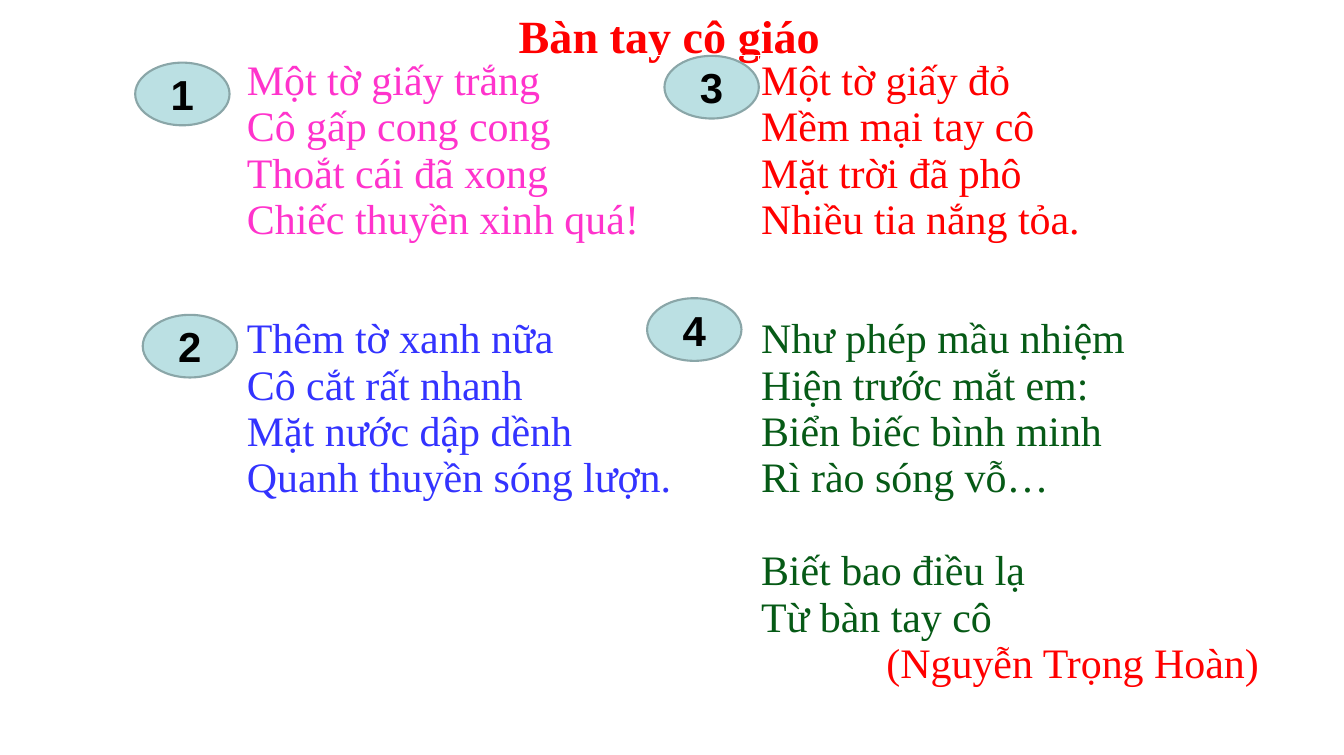
from dataclasses import dataclass

import pptx
import pptx.dml.color
import pptx.enum.shapes
import pptx.enum.text
import pptx.util

Inches = pptx.util.Inches
Pt = pptx.util.Pt
Align = pptx.enum.text.PP_ALIGN
Anchor = pptx.enum.text.MSO_ANCHOR


@dataclass(frozen=True)
class Theme:
    verse_font: str = "Times New Roman"
    number_font: str = "Arial"
    title_size: int = 44
    verse_size: int = 40
    red: str = "FF0000"
    pink: str = "FF33CC"
    blue: str = "3333FF"
    green: str = "065A16"
    black: str = "000000"
    badge_fill: str = "BBE0E3"
    badge_line: str = "8AA6A8"


THEME = Theme()
SLIDE_WIDTH, SLIDE_HEIGHT = 17.8, 10
POEM_LEFT, POEM_TOP = 3.23, 0.73
COLUMNS = (6.81, 7.02)
ROWS = (3.42, 5.41)
BADGE_WIDTH, BADGE_HEIGHT = 1.25, 0.83
CELL_INSET = 0.04
AUTHOR_INDENT = 1.66

# Number, row, column, colour, badge offset from the cell corner, verse groups
STANZAS = [
    (1, 0, 0, THEME.pink, (-1.44, 0.1),
     [["Một tờ giấy trắng", "Cô gấp cong cong",
       "Thoắt cái đã xong", "Chiếc thuyền xinh quá!"]]),
    (2, 1, 0, THEME.blue, (-1.34, 0.02),
     [["Thêm tờ xanh nữa", "Cô cắt rất nhanh",
       "Mặt nước dập dềnh", "Quanh thuyền sóng lượn."]]),
    (3, 0, 1, THEME.red, (-1.24, 0.01),
     [["Một tờ giấy đỏ", "Mềm mại tay cô",
       "Mặt trời đã phô", "Nhiều tia nắng tỏa."]]),
    (4, 1, 1, THEME.green, (-1.47, -0.2),
     [["Như phép mầu nhiệm", "Hiện trước mắt em:",
       "Biển biếc bình minh", "Rì rào sóng vỗ…"],
      ["Biết bao điều lạ", "Từ bàn tay cô"]]),
]
AUTHOR = "(Nguyễn Trọng Hoàn)"


def rgb(colour):
    return pptx.dml.color.RGBColor.from_string(colour)


def apply_format(target, values):
    for name, value in values.items():
        setattr(target, name, value)


def write_line(paragraph, text, font, size, colour, bold=False):
    line = paragraph.add_run()
    line.text = text
    apply_format(line.font, {"name": font, "size": Pt(size), "bold": bold})
    line.font.color.rgb = rgb(colour)


def add_title(slide, text):
    title = slide.shapes.title
    apply_format(title, {"left": Inches(6.77), "top": 0,
                         "width": Inches(5.32), "height": Inches(0.84)})
    apply_format(title.text_frame, {
        "word_wrap": True, "auto_size": pptx.enum.text.MSO_AUTO_SIZE.NONE,
        "vertical_anchor": Anchor.TOP, "margin_top": Inches(0.1),
        "margin_bottom": 0})
    heading = title.text_frame.paragraphs[0]
    heading.alignment = Align.LEFT
    write_line(heading, text, THEME.verse_font, THEME.title_size,
               THEME.red, bold=True)


def add_poem_table(slide):
    poem = slide.shapes.add_table(
        len(ROWS), len(COLUMNS), Inches(POEM_LEFT), Inches(POEM_TOP),
        Inches(sum(COLUMNS)), Inches(sum(ROWS))).table
    apply_format(poem, {"first_row": False, "horz_banding": False})
    for column, width in zip(poem.columns, COLUMNS):
        column.width = Inches(width)
    for row, height in zip(poem.rows, ROWS):
        row.height = Inches(height)
    for cell in poem.iter_cells():
        cell.fill.background()
        apply_format(cell, {f"margin_{side}": Inches(CELL_INSET)
                            for side in ("left", "top", "right", "bottom")})
    return poem


def write_stanza(cell, groups, colour):
    """Write one verse per paragraph, with a line of space between groups."""
    frame = cell.text_frame
    for group_index, verses in enumerate(groups):
        for verse_index, verse in enumerate(verses):
            first = group_index == verse_index == 0
            paragraph = frame.paragraphs[0] if first else frame.add_paragraph()
            if group_index and verse_index == 0:
                paragraph.space_before = Pt(THEME.verse_size * 1.11)
            write_line(paragraph, verse, THEME.verse_font,
                       THEME.verse_size, colour)


def write_author(cell):
    credit = cell.text_frame.add_paragraph()
    credit._p.get_or_add_pPr().set("marL", str(Inches(AUTHOR_INDENT)))
    write_line(credit, AUTHOR, THEME.verse_font, THEME.verse_size, THEME.red)


def add_badge(slide, number, row, column, offset):
    left = POEM_LEFT + sum(COLUMNS[:column]) + offset[0]
    top = POEM_TOP + sum(ROWS[:row]) + offset[1]
    badge = slide.shapes.add_shape(
        pptx.enum.shapes.MSO_SHAPE.OVAL, Inches(left), Inches(top),
        Inches(BADGE_WIDTH), Inches(BADGE_HEIGHT))
    badge.shadow.inherit = False
    badge.fill.solid()
    badge.fill.fore_color.rgb = rgb(THEME.badge_fill)
    badge.line.color.rgb = rgb(THEME.badge_line)
    badge.line.width = Pt(2)
    badge.text_frame.vertical_anchor = Anchor.MIDDLE
    label = badge.text_frame.paragraphs[0]
    label.alignment = Align.CENTER
    write_line(label, str(number), THEME.number_font, THEME.verse_size,
               THEME.black, bold=True)


def main():
    deck = pptx.Presentation()
    apply_format(deck, {"slide_width": Inches(SLIDE_WIDTH),
                        "slide_height": Inches(SLIDE_HEIGHT)})
    slide = deck.slides.add_slide(deck.slide_layouts.get_by_name("Title Only"))
    add_title(slide, "Bàn tay cô giáo")
    poem = add_poem_table(slide)
    for number, row, column, colour, offset, groups in STANZAS:
        write_stanza(poem.cell(row, column), groups, colour)
        add_badge(slide, number, row, column, offset)
    write_author(poem.cell(1, 1))
    deck.save("out.pptx")


if __name__ == "__main__":
    main()
